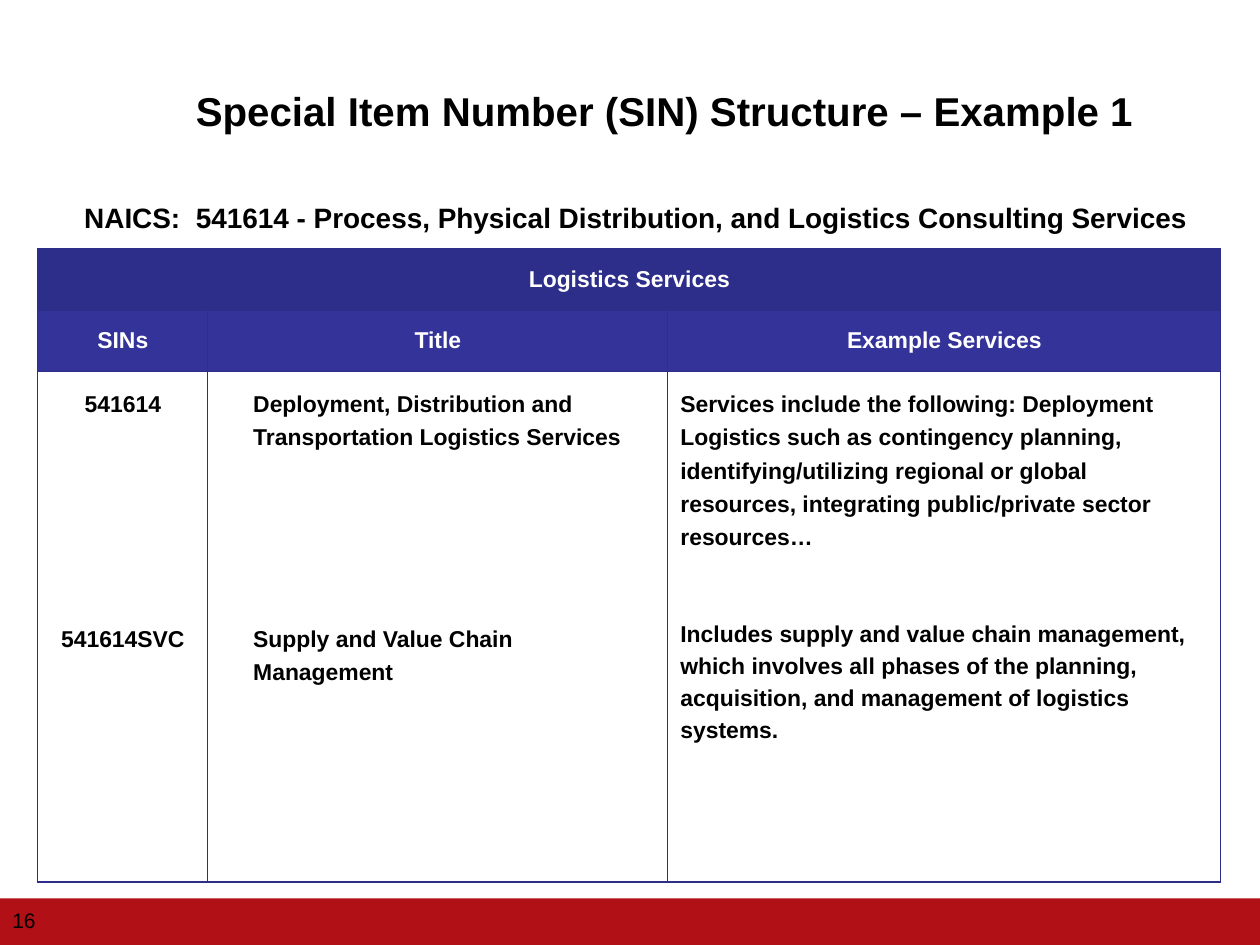
from lxml.etree import SubElement
from pptx import Presentation
from pptx.dml.color import RGBColor
from pptx.enum.shapes import MSO_SHAPE
from pptx.enum.text import MSO_ANCHOR as Anchor, PP_ALIGN as Align
from pptx.oxml.ns import qn
from pptx.util import Inches, Pt

# Content
TITLE = "Special Item Number (SIN) Structure – Example 1"
NAICS = ("NAICS:  541614\u00a0- Process, Physical Distribution, "
         "and Logistics Consulting Services")
PAGE_NUMBER = "16"
CATEGORY = "Logistics Services"
HEADINGS = ["SINs", "Title", "Example Services"]
SIN_ENTRIES = [
    ("541614",
     "Deployment, Distribution and Transportation Logistics Services",
     "Services include the following: Deployment Logistics such as contingency "
     "planning, identifying/utilizing regional or global resources, integrating "
     "public/private sector resources…"),
    ("541614SVC",
     "Supply and Value Chain Management",
     "Includes supply and value chain management, which involves all phases of "
     "the planning, acquisition, and management of logistics systems."),
]
# Per column: alignment, left indent, line spacing by entry, gap between entries
COLUMN_FORMATS = [
    (Align.CENTER, 0, (1.3, 1.3), 115),
    (Align.LEFT, 0.26, (1.3, 1.3), 96),
    (Align.LEFT, 0, (1.3, 1.25), 37),
]

# Look
BLACK = RGBColor(0x00, 0x00, 0x00)
WHITE = RGBColor(0xFF, 0xFF, 0xFF)
RED = RGBColor(0xB1, 0x11, 0x16)
NAVY = RGBColor(0x2D, 0x2D, 0x8A)
INDIGO = RGBColor(0x33, 0x33, 0x99)
TABLE_SIZE = 13.1

# Layout
WIDTH, HEIGHT = 10, 7.5
FOOTER_HEIGHT = 0.37
TABLE_LEFT, TABLE_TOP = 0.3, 1.97
COLUMN_WIDTHS = [1.35, 3.65, 4.39]
ROW_HEIGHTS = [0.49, 0.49, 4.05]


def write(frame, text, size=TABLE_SIZE, color=BLACK, bold=True, align=Align.LEFT,
          indent=0, spacing=None, before=0, first=True):
    paragraph = frame.paragraphs[0] if first else frame.add_paragraph()
    paragraph.alignment = align
    if indent:
        properties = paragraph._p.get_or_add_pPr()
        properties.set("marL", str(Inches(indent)))
        properties.set("indent", "0")
    if spacing:
        paragraph.line_spacing = spacing
    if before:
        paragraph.space_before = Pt(before)
    run = paragraph.add_run()
    run.text = text
    run.font.name, run.font.size = "Arial", Pt(size)
    run.font.bold, run.font.color.rgb = bold, color


def add_label(left, top, width, height, text, anchor=Anchor.TOP, **text_format):
    box = slide.shapes.add_textbox(*map(Inches, (left, top, width, height)))
    box.text_frame.word_wrap = True
    box.text_frame.vertical_anchor = anchor
    write(box.text_frame, text, **text_format)


def style_cell(cell, color, anchor):
    cell.margin_left = cell.margin_right = Inches(0.1)
    cell.margin_top = cell.margin_bottom = Inches(0.1)
    cell.vertical_anchor = anchor
    properties = cell._tc.get_or_add_tcPr()
    for side in ("lnL", "lnR", "lnT", "lnB"):
        border = SubElement(properties, qn(f"a:{side}"), w=str(Pt(0.75)))
        border_fill = SubElement(border, qn("a:solidFill"))
        SubElement(border_fill, qn("a:srgbClr"), val=str(NAVY))
    cell.fill.solid()
    cell.fill.fore_color.rgb = color


presentation = Presentation()
presentation.slide_width, presentation.slide_height = Inches(WIDTH), Inches(HEIGHT)
slide = presentation.slides.add_slide(presentation.slide_layouts[6])

# Footer band
footer = slide.shapes.add_shape(
    MSO_SHAPE.RECTANGLE, 0, Inches(HEIGHT - FOOTER_HEIGHT),
    Inches(WIDTH), Inches(FOOTER_HEIGHT))
footer.shadow.inherit = False
footer.fill.solid()
footer.fill.fore_color.rgb = RED
footer.line.fill.background()

# Title, classification line and page number
add_label(0.78, 0.68, 9, 0.46, TITLE, size=23, align=Align.CENTER, spacing=0.9)
add_label(0.45, 1.41, 9.11, 0.4, NAICS, size=16, indent=0.12, spacing=1.5)
add_label(0, 7.1, 2.33, 0.4, PAGE_NUMBER, anchor=Anchor.MIDDLE, size=12, bold=False)

# Table grid
table = slide.shapes.add_table(
    len(ROW_HEIGHTS), len(COLUMN_WIDTHS), Inches(TABLE_LEFT), Inches(TABLE_TOP),
    Inches(sum(COLUMN_WIDTHS)), Inches(sum(ROW_HEIGHTS))).table
for column, width in zip(table.columns, COLUMN_WIDTHS):
    column.width = Inches(width)
for row, height, color, anchor in zip(
        table.rows, ROW_HEIGHTS, (NAVY, INDIGO, WHITE),
        (Anchor.MIDDLE, Anchor.MIDDLE, Anchor.TOP)):
    row.height = Inches(height)
    for cell in row.cells:
        style_cell(cell, color, anchor)

# Table text
table.cell(0, 0).merge(table.cell(0, len(HEADINGS) - 1))
write(table.cell(0, 0).text_frame, CATEGORY, color=WHITE, align=Align.CENTER)
for index, heading in enumerate(HEADINGS):
    write(table.cell(1, index).text_frame, heading, color=WHITE, align=Align.CENTER)
    align, indent, spacings, gap = COLUMN_FORMATS[index]
    for number, (entry, spacing) in enumerate(zip(SIN_ENTRIES, spacings)):
        write(table.cell(2, index).text_frame, entry[index], align=align,
              indent=indent, spacing=spacing, before=gap if number else 0,
              first=number == 0)

presentation.save("out.pptx")
